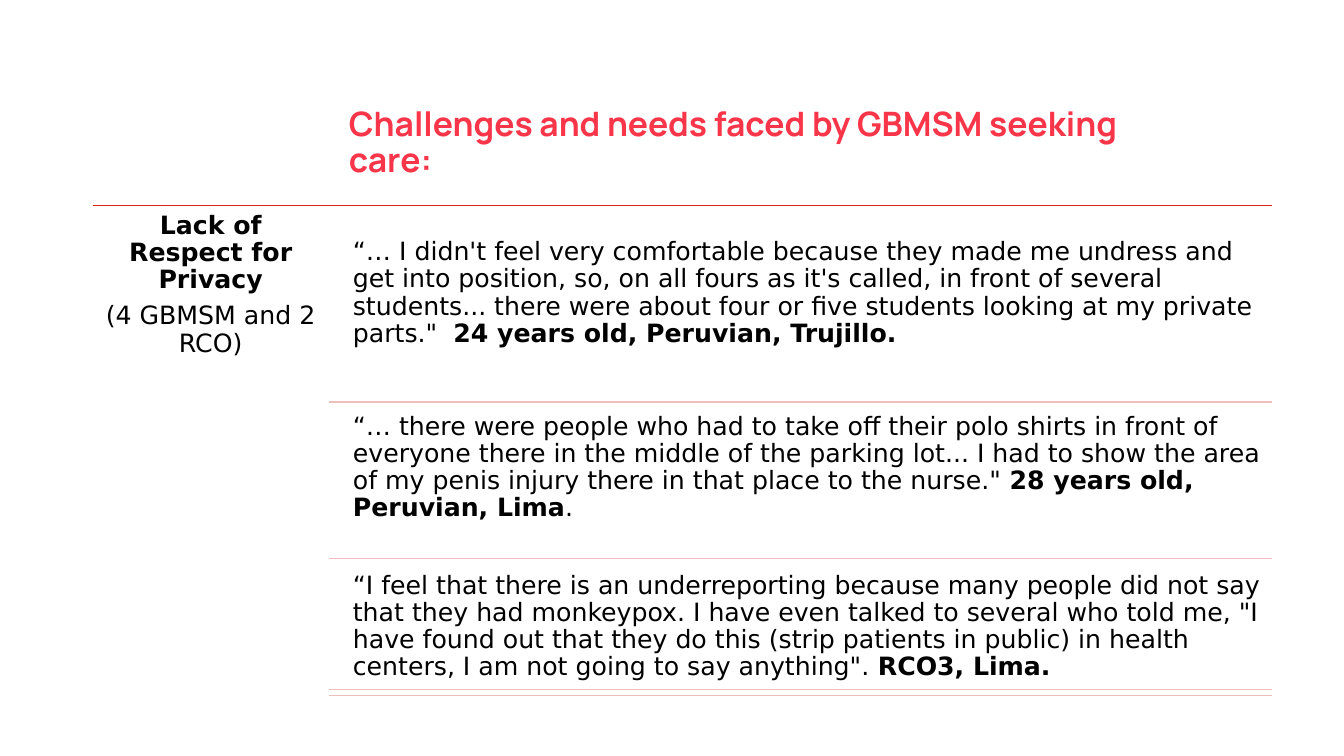
from lxml import etree
from pptx import Presentation
from pptx.dml.color import RGBColor
from pptx.enum.shapes import MSO_CONNECTOR
from pptx.enum.text import MSO_ANCHOR, PP_ALIGN
from pptx.oxml.ns import qn
from pptx.util import Inches, Pt

STRAIGHT = MSO_CONNECTOR.STRAIGHT
MIDDLE, TOP = MSO_ANCHOR.MIDDLE, MSO_ANCHOR.TOP
LEFT, CENTER = PP_ALIGN.LEFT, PP_ALIGN.CENTER

CORAL = RGBColor(0xF9, 0x35, 0x49)
RED = RGBColor(0xDB, 0x24, 0x15)
PINK = RGBColor(0xEE, 0xBE, 0xBD)
BLACK = RGBColor(0, 0, 0)
TITLE_FONT, BODY_FONT = "Manrope", "DejaVu Sans"

# A paragraph is a list of (text, bold) runs.
TITLE = [("Challenges and needs faced by GBMSM seeking care:", True)]
THEME = [
    [("Lack of Respect for Privacy", True)],
    [("(4 GBMSM and 2 RCO)", False)],
]
QUOTES = [  # top of the quote, its runs
    (2.30, [
        ("“… I didn't feel very comfortable because they made me undress and "
         "get into position, so, on all fours as it's called, in front of "
         "several students... there were about four or five students looking "
         "at my private parts.\" \u00a0", False),
        ("24 years old, Peruvian, Trujillo.", True),
    ]),
    (4.03, [
        ("“… there were people who had to take off their polo shirts in front "
         "of everyone there in the middle of the parking lot... I had to show "
         "the area of my penis injury there in that place to the nurse.\" ", False),
        ("28 years old, Peruvian, Lima", True),
        (".", False),
    ]),
    (5.61, [
        ("“I feel that there is an underreporting because many people did not "
         "say that they had monkeypox. I have even talked to several who told "
         "me, \"I have found out that they do this (strip patients in public) "
         "in health centers, I am not going to say anything\". ", False),
        ("RCO3, Lima.", True),
    ]),
]
TABLE_LEFT, TABLE_RIGHT, TABLE_TOP = 0.92, 12.62, 2.04
RULE_LEFT, QUOTE_LEFT = 3.26, 3.43
QUOTE_RULES = [3.99, 5.54, 6.84, 6.90]


def set_text(frame, paragraphs, font, size, color, align=LEFT,
             anchor=TOP, margins=(0.07, 0.07), space_after=0):
    frame.word_wrap = True
    frame.vertical_anchor = anchor
    frame.margin_left = frame.margin_right = Inches(margins[0])
    frame.margin_top = frame.margin_bottom = Inches(margins[1])
    for index, runs in enumerate(paragraphs):
        paragraph = frame.add_paragraph() if index else frame.paragraphs[0]
        paragraph.alignment = align
        paragraph.line_spacing = 0.9
        paragraph.space_before = Pt(0)
        paragraph.space_after = Pt(space_after)
        for text, bold in runs:
            run = paragraph.add_run()
            run.text = text
            run.font.name = font
            run.font.size = Pt(size)
            run.font.bold = bold
            run.font.color.rgb = color


def add_body(slide, left, top, width, height, paragraphs, align=LEFT):
    box = slide.shapes.add_textbox(
        Inches(left), Inches(top), Inches(width), Inches(height))
    set_text(box.text_frame, paragraphs, BODY_FONT, 18, BLACK, align,
             space_after=6.3)


def add_rule(slide, left, y, color):
    rule = slide.shapes.add_connector(
        STRAIGHT, Inches(left), Inches(y), Inches(TABLE_RIGHT), Inches(y))
    rule.line.color.rgb = color
    rule.line.width = Pt(1)
    etree.SubElement(rule._element.spPr, qn("a:effectLst"))


def main():
    deck = Presentation()
    deck.slide_width, deck.slide_height = Inches(13.33), Inches(7.5)
    slide = deck.slides.add_slide(deck.slide_layouts[5])

    title = slide.shapes.title
    title.left, title.top = Inches(3.36), Inches(0.7)
    title.width, title.height = Inches(8.61), Inches(1.45)
    set_text(title.text_frame, [TITLE], TITLE_FONT, 24, CORAL,
             anchor=MIDDLE, margins=(0.1, 0.05))

    add_rule(slide, TABLE_LEFT, TABLE_TOP, RED)
    add_body(slide, TABLE_LEFT, TABLE_TOP, RULE_LEFT - TABLE_LEFT,
             QUOTE_RULES[-1] - TABLE_TOP, THEME, CENTER)
    for top, runs in QUOTES:
        add_body(slide, QUOTE_LEFT, top, TABLE_RIGHT - QUOTE_LEFT, 1.14, [runs])
    for y in QUOTE_RULES:
        add_rule(slide, RULE_LEFT, y, PINK)

    deck.save("out.pptx")


if __name__ == "__main__":
    main()
